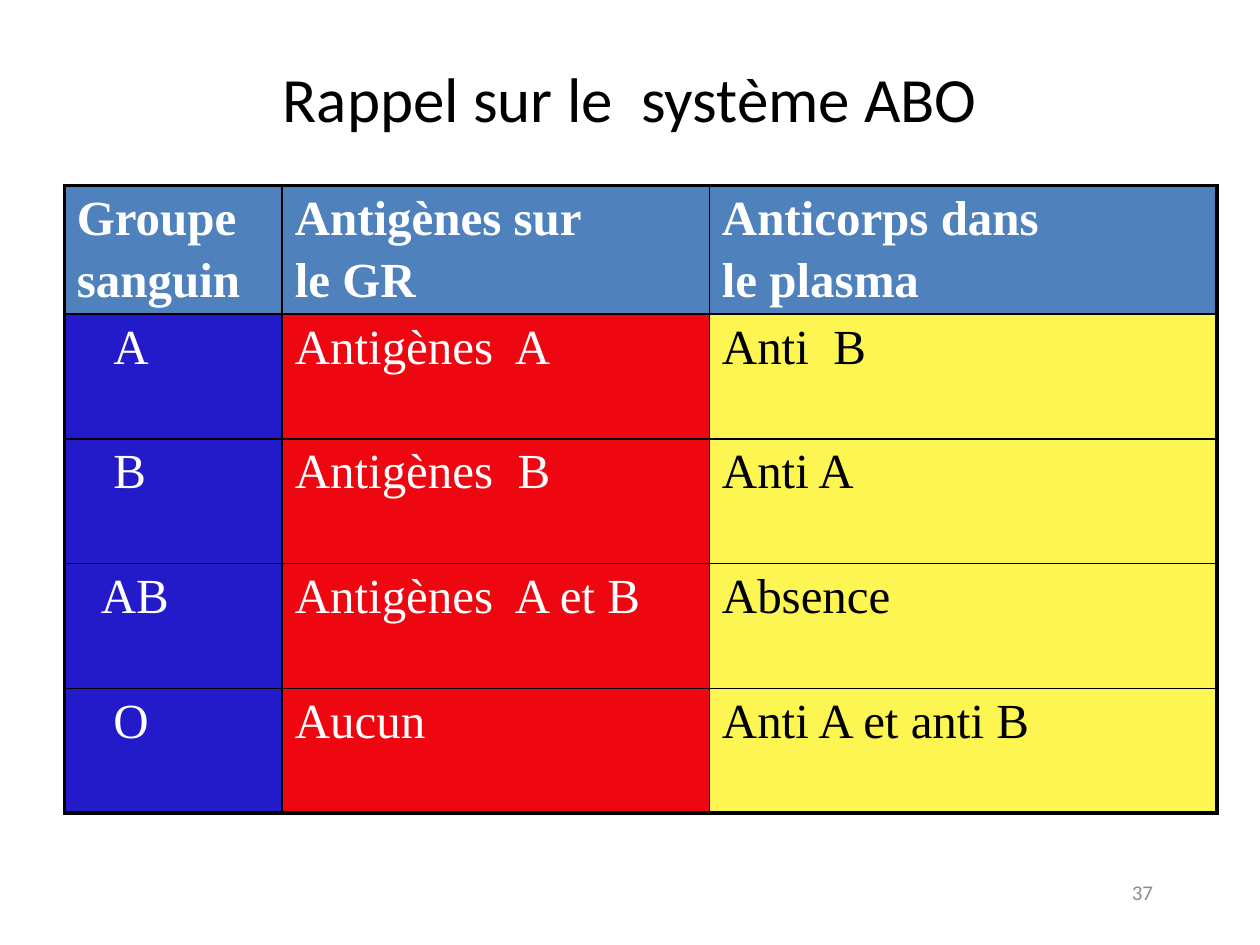
from dataclasses import dataclass

from lxml.etree import SubElement
from pptx import Presentation
from pptx.dml.color import RGBColor
from pptx.enum.text import MSO_ANCHOR, PP_ALIGN
from pptx.oxml.ns import qn
from pptx.util import Inches, Pt


@dataclass(frozen=True)
class Theme:
    black: str = "000000"
    white: str = "FFFFFF"
    grey: str = "8C8C8C"
    header: str = "4F81BD"
    group: str = "231BC9"
    antigen: str = "EE0611"
    antibody: str = "FDF551"
    sans: str = "Calibri"
    serif: str = "Times New Roman"
    title_size: float = 36
    table_size: float = 28
    number_size: float = 12
    outer_line: float = 2.25
    inner_line: float = 1


theme = Theme()


def add_run(paragraph, text, size, font, color, bold=False):
    run = paragraph.add_run()
    run.text = text
    run.font.size = Pt(size)
    run.font.name = font
    run.font.bold = bold
    run.font.color.rgb = RGBColor.from_string(color)


def add_border(cell, side, width):
    line = SubElement(cell._tc.get_or_add_tcPr(), qn(f"a:ln{side}"), w=str(Pt(width)))
    fill = SubElement(line, qn("a:solidFill"))
    SubElement(fill, qn("a:srgbClr"), val=theme.black)


deck = Presentation()
deck.slide_width, deck.slide_height = Inches(10), Inches(7.5)
slide = deck.slides.add_slide(deck.slide_layouts[5])

# Title
title = slide.shapes.title
title.left, title.top = Inches(0.75), 0
title.width, title.height = Inches(8.5), Inches(1.55)
title.text_frame.vertical_anchor = MSO_ANCHOR.MIDDLE
heading = title.text_frame.paragraphs[0]
heading.alignment = PP_ALIGN.CENTER
add_run(heading, "Rappel sur le  système ABO", theme.title_size, theme.sans, theme.black)

# Blood groups: each cell holds its lines
rows = [
    [["Groupe", "sanguin"], ["Antigènes sur", "le GR"], ["Anticorps dans", "le plasma"]],
    [["A"], ["Antigènes  A"], ["Anti  B"]],
    [["B"], ["Antigènes  B"], ["Anti A"]],
    [["AB"], ["Antigènes  A et B"], ["Absence"]],
    [["O"], ["Aucun"], ["Anti A et anti B"]],
]
column_widths = [1.73, 3.39, 4.03]
column_fills = [theme.group, theme.antigen, theme.antibody]
column_inks = [theme.white, theme.white, theme.black]
row_height = 0.99
last_row, last_column = len(rows) - 1, len(column_widths) - 1

abo_table = slide.shapes.add_table(
    len(rows), len(column_widths), Inches(0.51), Inches(1.47),
    Inches(sum(column_widths)), Inches(row_height * len(rows))).table
abo_table.horz_banding = False
for column, width in zip(abo_table.columns, column_widths):
    column.width = Inches(width)

for r, row in enumerate(rows):
    abo_table.rows[r].height = Inches(row_height)
    is_header = r == 0
    for c, lines in enumerate(row):
        cell = abo_table.cell(r, c)

        # Heavy frame outside, thin lines inside
        on_edge = {"L": c == 0, "R": c == last_column, "T": r == 0, "B": r == last_row}
        for side, outer in on_edge.items():
            add_border(cell, side, theme.outer_line if outer else theme.inner_line)
        cell.fill.solid()
        cell.fill.fore_color.rgb = RGBColor.from_string(
            theme.header if is_header else column_fills[c])

        for i, line in enumerate(lines):
            frame = cell.text_frame
            paragraph = frame.add_paragraph() if i else frame.paragraphs[0]
            if i:
                paragraph.space_before = Pt(4.5)
            if c == 0 and not is_header:
                # Group letters are indented, the longer name a little less
                indent = 0.29 if len(line) == 1 else 0.19
                paragraph._p.get_or_add_pPr().set("marL", str(Inches(indent)))
            add_run(paragraph, line, theme.table_size, theme.serif,
                    theme.white if is_header else column_inks[c], is_header)

# Slide number
page_number = slide.shapes.add_textbox(
    Inches(7.17), Inches(6.83), Inches(2.08), Inches(0.5)).text_frame
page_number.word_wrap = True
page_number.vertical_anchor = MSO_ANCHOR.MIDDLE
page_number.paragraphs[0].alignment = PP_ALIGN.RIGHT
add_run(page_number.paragraphs[0], "37", theme.number_size, theme.sans, theme.grey)

deck.save("out.pptx")
